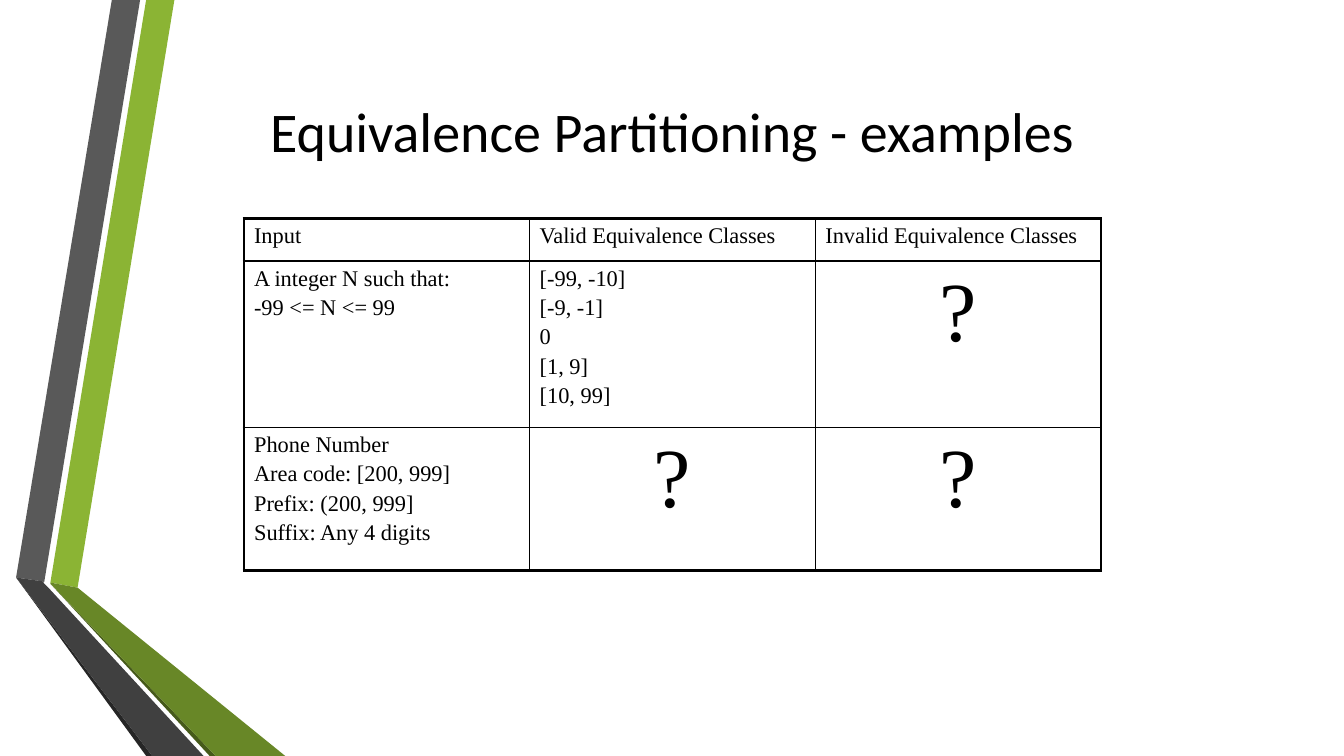
from lxml import etree
from pptx import Presentation
from pptx.dml.color import RGBColor
from pptx.enum import text
from pptx.oxml import ns
from pptx.util import Inches, Pt

BLACK = "000000"
THICK, THIN = 2.25, 1

# Decorative ribbon: fill and corner points in inches
RIBBON = [
    ("8BB434", [(0.5, 5.78), (0.77, 5.83), (1.73, 0), (1.45, 0)]),
    ("595959", [(1.39, 0), (1.11, 0), (0.16, 5.73), (0.44, 5.77)]),
    ("262626", [(0.16, 5.73), (1.45, 7.5), (1.51, 7.5)]),
    ("465A1A", [(0.5, 5.79), (2.08, 7.5), (2.14, 7.5)]),
    ("688727", [(0.5, 5.78), (0.5, 5.79), (2.14, 7.5), (2.83, 7.5), (0.77, 5.83)]),
    ("404040", [(2.02, 7.5), (0.48, 5.83), (0.43, 5.78), (0.44, 5.77),
                (0.16, 5.73), (1.51, 7.5)]),
]

# Each cell is a list of lines
CLASSES = [
    [["Input"], ["Valid Equivalence Classes"], ["Invalid Equivalence Classes"]],
    [["A integer N such that:", "-99 <= N <= 99"],
     ["[-99, -10]", "[-9, -1]", "0", "[1, 9]", "[10, 99]"],
     ["?"]],
    [["Phone Number", "Area code: [200, 999]", "Prefix: (200, 999]",
      "Suffix: Any 4 digits"],
     ["?"],
     ["?"]],
]
ROW_HEIGHTS = [0.42, 1.65, 1.42]


def color(hex_code):
    return RGBColor.from_string(hex_code)


def write(frame, lines, font, size, fill=BLACK, centered=False, before=0):
    """Fill a text frame; before is the space above a line in percent."""
    frame.word_wrap = True
    for i, line in enumerate(lines):
        paragraph = frame.paragraphs[0] if i == 0 else frame.add_paragraph()
        paragraph.alignment = text.PP_ALIGN.CENTER if centered else text.PP_ALIGN.LEFT
        if before:
            spacing = etree.Element(ns.qn("a:spcBef"))
            etree.SubElement(spacing, ns.qn("a:spcPct"), val=str(before * 1000))
            paragraph._p.get_or_add_pPr().insert(0, spacing)
        run = paragraph.add_run()
        run.text = line
        run.font.name = font
        run.font.size = Pt(size)
        run.font.color.rgb = color(fill)


def add_band(slide, fill, points):
    corners = [(Inches(x), Inches(y)) for x, y in points]
    builder = slide.shapes.build_freeform(*corners[0])
    builder.add_line_segments(corners[1:], close=True)
    band = builder.convert_to_shape()
    band.shadow.inherit = False
    band.fill.solid()
    band.fill.fore_color.rgb = color(fill)
    band.line.fill.background()


def add_title(slide, wording):
    title = slide.shapes.add_textbox(Inches(1), Inches(0.67), Inches(11.33), Inches(1.25))
    title.text_frame.vertical_anchor = text.MSO_ANCHOR.MIDDLE
    write(title.text_frame, [wording], "Calibri", 40, centered=True)


def set_borders(cell, widths):
    """Draw the cell's left, right, top and bottom borders, in that order."""
    properties = cell._tc.get_or_add_tcPr()
    for side, width in zip("LRTB", widths):
        border = etree.SubElement(properties, ns.qn("a:ln" + side), w=str(Pt(width)))
        fill = etree.SubElement(border, ns.qn("a:solidFill"))
        etree.SubElement(fill, ns.qn("a:srgbClr"), val=BLACK)


def add_class_table(slide, rows):
    last_row, last_column = len(rows) - 1, len(rows[0]) - 1
    table = slide.shapes.add_table(
        len(rows), len(rows[0]), Inches(2.42), Inches(2.17),
        Inches(8.5), Inches(sum(ROW_HEIGHTS))).table
    table.first_row = table.horz_banding = False
    for r, row in enumerate(rows):
        table.rows[r].height = Inches(ROW_HEIGHTS[r])
        for c, lines in enumerate(row):
            cell = table.cell(r, c)
            # Thick outer frame, thin inner grid
            outer = (c == 0, c == last_column, r == 0, r == last_row)
            set_borders(cell, [THICK if edge else THIN for edge in outer])
            cell.fill.background()
            is_open = lines == ["?"]
            write(cell.text_frame, lines, "Times New Roman", 60 if is_open else 16,
                  centered=is_open, before=20)


def main():
    deck = Presentation()
    deck.slide_width, deck.slide_height = Inches(13.33), Inches(7.5)
    slide = deck.slides.add_slide(deck.slide_layouts[6])
    for fill, points in RIBBON:
        add_band(slide, fill, points)
    add_title(slide, "Equivalence Partitioning - examples")
    add_class_table(slide, CLASSES)
    deck.save("out.pptx")


if __name__ == "__main__":
    main()
